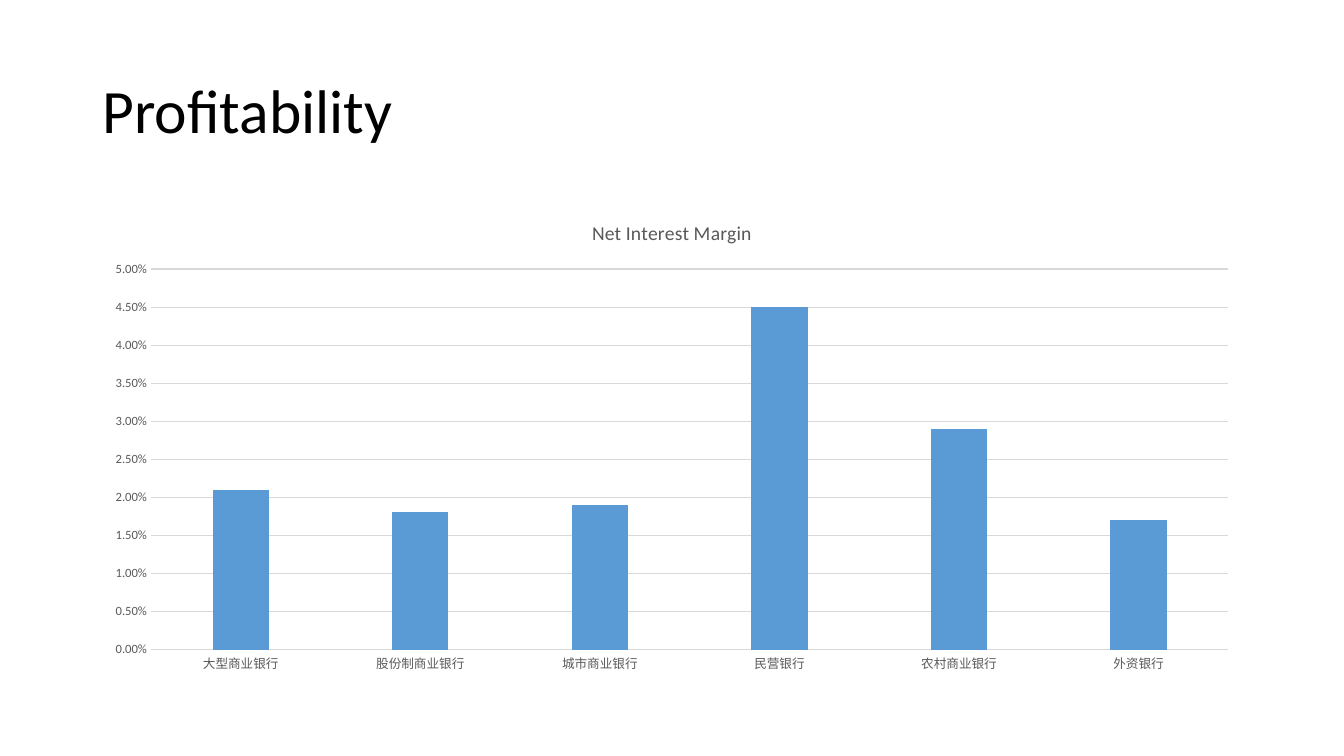
import pptx
import pptx.chart.data
import pptx.dml.color
import pptx.enum.chart
import pptx.enum.text
import pptx.util
from dataclasses import dataclass

Cm = pptx.util.Cm
Pt = pptx.util.Pt


def rgb(value):
    return pptx.dml.color.RGBColor.from_string(value)


def apply(obj, values):
    for name, value in values.items():
        setattr(obj, name, value)


@dataclass(frozen=True)
class Theme:
    font: str = "Calibri"
    title_color: str = "000000"
    label_color: str = "595959"
    grid_color: str = "D9D9D9"
    bar_color: str = "5B9BD5"
    title_size: int = 44
    chart_title_size: int = 14
    label_size: int = 9
    grid_width: float = 0.75


class Deck:
    def __init__(self, prs, theme):
        self.theme = theme
        self.s = prs.slides.add_slide(prs.slide_layouts[6])

    def style_font(self, font, size, color):
        apply(font, {"name": self.theme.font, "size": Pt(size), "bold": False})
        font.color.rgb = rgb(color)

    def style_line(self, line):
        line.color.rgb = rgb(self.theme.grid_color)
        line.width = Pt(self.theme.grid_width)

    def title(self, text, box):
        sp = self.s.shapes.add_textbox(*map(Cm, box))
        tf = sp.text_frame
        apply(tf, {"word_wrap": True,
                   "vertical_anchor": pptx.enum.text.MSO_ANCHOR.MIDDLE})
        p = tf.paragraphs[0]
        p.line_spacing = 0.9
        r = p.add_run()
        r.text = text
        self.style_font(r.font, self.theme.title_size, self.theme.title_color)

    def column_chart(self, title, values, box):
        t = self.theme
        data = pptx.chart.data.CategoryChartData(number_format="0.00%")
        data.categories = list(values)
        data.add_series(title, list(values.values()))
        kind = pptx.enum.chart.XL_CHART_TYPE.COLUMN_CLUSTERED
        chart = self.s.shapes.add_chart(kind, *map(Cm, box), data).chart
        apply(chart, {"has_legend": False, "has_title": True})
        self.style_font(chart.font, t.label_size, t.label_color)

        # Chart title
        p = chart.chart_title.text_frame.paragraphs[0]
        r = p.add_run()
        r.text = title
        self.style_font(r.font, t.chart_title_size, t.label_color)
        chart.chart_title.include_in_layout = False

        # Columns
        plot = chart.plots[0]
        apply(plot, {"gap_width": 219, "overlap": -27, "vary_by_categories": False})
        fill = plot.series[0].format.fill
        fill.solid()
        fill.fore_color.rgb = rgb(t.bar_color)

        # Axes
        no_tick = pptx.enum.chart.XL_TICK_MARK.NONE
        for axis in (chart.category_axis, chart.value_axis):
            apply(axis, {"major_tick_mark": no_tick, "minor_tick_mark": no_tick})
            self.style_font(axis.tick_labels.font, t.label_size, t.label_color)
        self.style_line(chart.category_axis.format.line)
        axis = chart.value_axis
        apply(axis, {"minimum_scale": 0, "maximum_scale": 0.05, "major_unit": 0.005,
                     "has_major_gridlines": True})
        apply(axis.tick_labels, {"number_format": "0.00%",
                                 "number_format_is_linked": False})
        axis.format.line.fill.background()
        self.style_line(axis.major_gridlines.format.line)


def main():
    prs = pptx.Presentation()
    apply(prs, {"slide_width": Cm(33.87), "slide_height": Cm(19.05)})
    deck = Deck(prs, Theme())
    left, width = 2.33, 29.21

    # Heading
    deck.title("Profitability", (left, 1.01, width, 3.68))

    # Margin by type of bank
    margins = {
        "大型商业银行": 0.021,
        "股份制商业银行": 0.018,
        "城市商业银行": 0.019,
        "民营银行": 0.045,
        "农村商业银行": 0.029,
        "外资银行": 0.017,
    }
    deck.column_chart("Net Interest Margin", margins, (left, 5.07, width, 12.09))
    prs.save("out.pptx")


if __name__ == "__main__":
    main()
